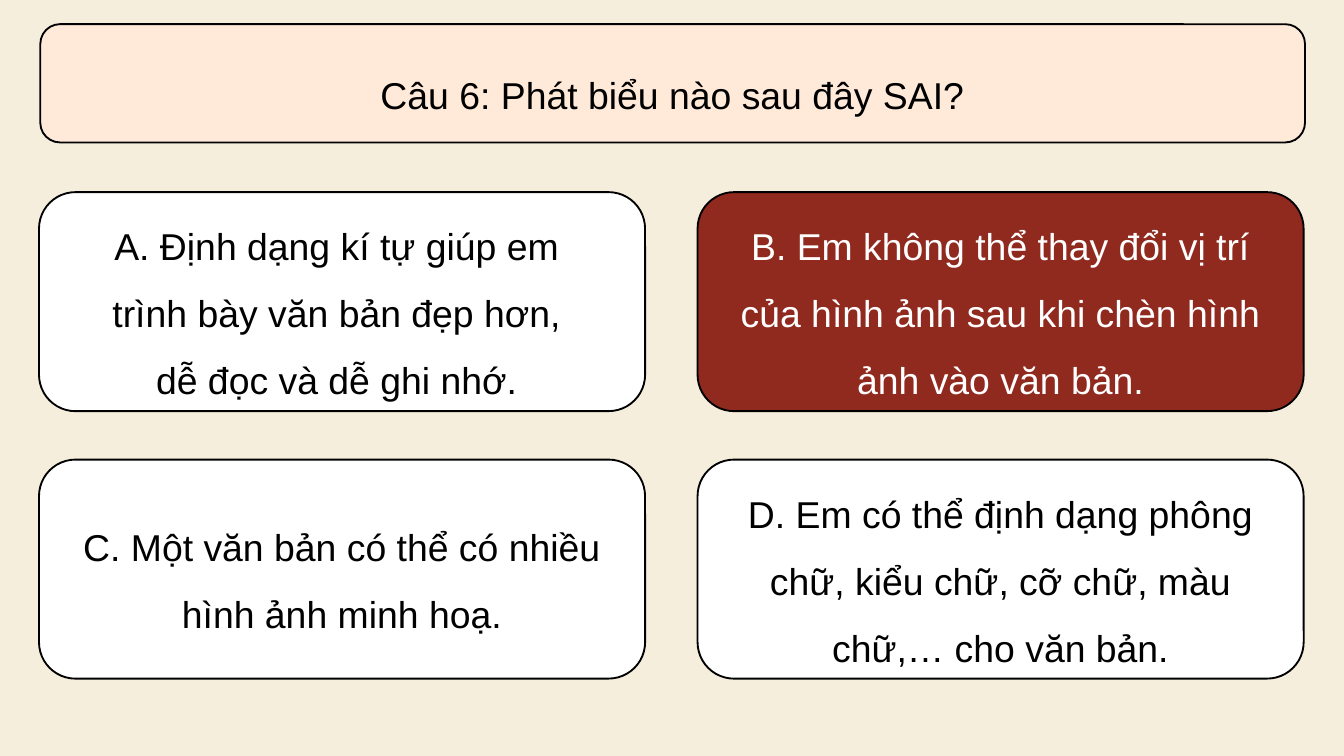
from dataclasses import dataclass

from pptx import Presentation
from pptx.dml.color import RGBColor
from pptx.enum import shapes, text
from pptx.util import Inches, Pt


@dataclass(frozen=True)
class Theme:
    background: str = "F5EEDC"
    question: str = "FFEADA"
    answer: str = "FFFFFF"
    chosen: str = "90291E"
    ink: str = "000000"
    chosen_ink: str = "FFFFFF"
    font: str = "Arial"
    size: int = 20
    outline: int = 1


theme = Theme()


def add_card(slide, left, top, width, height, lines, fill, ink):
    """Draw a rounded card with one centred paragraph per line."""
    card = slide.shapes.add_shape(
        shapes.MSO_SHAPE.ROUNDED_RECTANGLE,
        Inches(left), Inches(top), Inches(width), Inches(height),
    )
    card.shadow.inherit = False
    card.fill.solid()
    card.fill.fore_color.rgb = RGBColor.from_string(fill)
    card.line.color.rgb = RGBColor.from_string(theme.ink)
    card.line.width = Pt(theme.outline)
    frame = card.text_frame
    frame.word_wrap = True
    frame.vertical_anchor = text.MSO_ANCHOR.MIDDLE
    for index, line in enumerate(lines):
        paragraph = frame.add_paragraph() if index else frame.paragraphs[0]
        paragraph.alignment = text.PP_ALIGN.CENTER
        paragraph.line_spacing = 1.5
        run = paragraph.add_run()
        run.text = line
        run.font.name = theme.font
        run.font.size = Pt(theme.size)
        run.font.color.rgb = RGBColor.from_string(ink)


# Widescreen page, 16:9
prs = Presentation()
prs.slide_width = Inches(10)
prs.slide_height = prs.slide_width * 9 // 16
slide = prs.slides.add_slide(prs.slide_layouts[6])
slide.background.fill.solid()
slide.background.fill.fore_color.rgb = RGBColor.from_string(theme.background)

question = ["Câu 6: Phát biểu nào sau đây SAI?"]
add_card(slide, 0.3, 0.18, 9.41, 0.88, question, theme.question, theme.ink)

# Answers: a two by two grid, read row by row
answers = [
    ["A. Định dạng kí tự giúp em ", "trình bày văn bản đẹp hơn, ", "dễ đọc và dễ ghi nhớ. "],
    ["B. Em không thể thay đổi vị trí của hình ảnh sau khi chèn hình ảnh vào văn bản."],
    ["C. Một văn bản có thể có nhiều hình ảnh minh hoạ."],
    ["D. Em có thể định dạng phông chữ, kiểu chữ, cỡ chữ, màu chữ,… cho văn bản."],
]
CHOSEN = 1
LEFT, TOP, WIDTH, HEIGHT = 0.29, 1.43, 4.51, 1.63
COLUMN_STEP, ROW_STEP = 4.9, 1.99

for index, lines in enumerate(answers):
    row, column = divmod(index, 2)
    fill, ink = theme.answer, theme.ink
    if index == CHOSEN:
        fill, ink = theme.chosen, theme.chosen_ink
    add_card(slide, LEFT + column * COLUMN_STEP, TOP + row * ROW_STEP,
             WIDTH, HEIGHT, lines, fill, ink)

prs.save("out.pptx")
